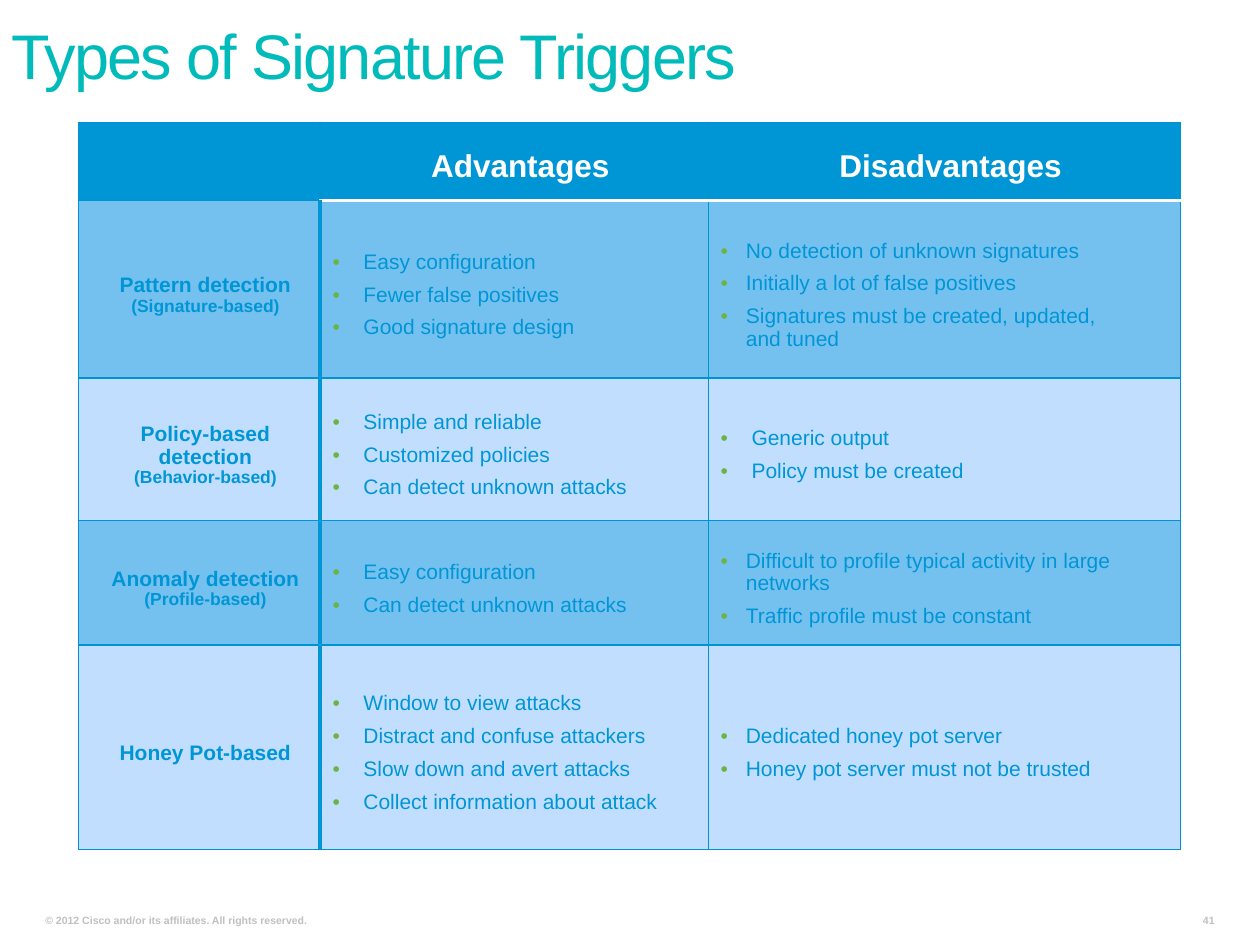
"""Build the slide that compares types of signature triggers."""
import dataclasses

import lxml.etree
import pptx
import pptx.dml.color
import pptx.enum.text
import pptx.oxml.ns
import pptx.util

ALIGN = pptx.enum.text.PP_ALIGN
ANCHOR = pptx.enum.text.MSO_ANCHOR


@dataclasses.dataclass(frozen=True)
class Theme:
    """Colours, type sizes and line widths of the slide."""
    font: str = "Arial"
    title: str = "01BBBB"
    accent: str = "0096D6"
    rule: str = "0093D1"
    bands: tuple = ("74C1EF", "C1DEFF")
    bullet: str = "6DB344"
    white: str = "FFFFFF"
    muted: str = "C0C0C0"
    title_size: float = 36
    header_size: float = 18
    body_size: float = 12
    note_size: float = 10
    footer_size: float = 6
    thin: float = 0.75
    thick: float = 2


class SlideBuilder:
    """Draws elements on one slide, measured on a grid of 100 by 75 squares."""

    def __init__(self, theme):
        """Open a presentation with one blank slide."""
        self.theme = theme
        self.deck = pptx.Presentation()
        self.deck.slide_width = pptx.util.Inches(10)
        self.deck.slide_height = pptx.util.Inches(7.5)
        self.slide = self.deck.slides.add_slide(self.deck.slide_layouts[6])

    def grid(self, *squares):
        """Turn grid squares into slide lengths."""
        return [round(count * self.deck.slide_width / 100) for count in squares]

    def element(self, parent, tag, **attributes):
        """Append a drawing element to a parent."""
        return lxml.etree.SubElement(parent, pptx.oxml.ns.qn(tag), attributes)

    def style(self, paragraph, size, color, bold=False):
        """Format every run of a paragraph."""
        for run in paragraph.runs:
            run.font.name = self.theme.font
            run.font.size = pptx.util.Pt(size)
            run.font.bold = bold
            run.font.color.rgb = pptx.dml.color.RGBColor.from_string(color)

    def label(self, text, place, size, color, bold=False, align=ALIGN.LEFT,
              wrap=True, inset=0.4, leading=1.0, tracking=0):
        """Add a line of text that stands on the bottom of its box."""
        frame = self.slide.shapes.add_textbox(*self.grid(*place)).text_frame
        frame.word_wrap = wrap
        frame.vertical_anchor = ANCHOR.BOTTOM
        frame.margin_left, frame.margin_right = self.grid(0.9, 0.9)
        frame.margin_top, frame.margin_bottom = self.grid(inset, inset)
        frame.text = text
        line = frame.paragraphs[0]
        line.alignment = align
        line.line_spacing = leading
        self.style(line, size, color, bold)
        if tracking:
            line.runs[0].font._element.set("spc", str(tracking * 100))

    def table(self, place, widths, heights):
        """Add a table with the given column widths and row heights."""
        table = self.slide.shapes.add_table(
            len(heights), len(widths), *self.grid(*place)).table
        for column, width in zip(table.columns, self.grid(*widths)):
            column.width = width
        for row, height in zip(table.rows, self.grid(*heights)):
            row.height = height
        return table

    def cell(self, cell, fill, lines, borders):
        """Fill a cell, set its lines of text and draw its four borders."""
        cell.fill.solid()
        cell.fill.fore_color.rgb = pptx.dml.color.RGBColor.from_string(fill)
        cell.vertical_anchor = ANCHOR.MIDDLE
        cell.margin_left, cell.margin_top = self.grid(1, 1)
        cell.margin_right = cell.margin_bottom = 0
        cell.text_frame.text = "\n".join(lines)
        for paragraph in cell.text_frame.paragraphs:
            paragraph.line_spacing = 0.95
        properties = cell._tc.get_or_add_tcPr()
        for index, side in enumerate("LRTB"):
            color, width = borders.get(side, (self.theme.rule, self.theme.thin))
            border = self.element(properties, f"a:ln{side}",
                                  w=str(pptx.util.Pt(width)))
            properties.insert(index, border)
            self.element(self.element(border, "a:solidFill"), "a:srgbClr", val=color)

    def heading(self, cell, text, borders):
        """Fill a cell of the header row."""
        self.cell(cell, self.theme.accent, [text], borders)
        paragraph = cell.text_frame.paragraphs[0]
        paragraph.alignment = ALIGN.CENTER
        self.style(paragraph, self.theme.header_size, self.theme.white, True)

    def method(self, cell, fill, lines, borders):
        """Fill a cell with a detection method and the note below it."""
        self.cell(cell, fill, lines, borders)
        sizes = (self.theme.body_size, self.theme.note_size)
        for paragraph, size in zip(cell.text_frame.paragraphs, sizes):
            paragraph.alignment = ALIGN.CENTER
            self.style(paragraph, size, self.theme.accent, True)

    def bullets(self, cell, fill, points, borders, indent):
        """Fill a cell with a bulleted list."""
        self.cell(cell, fill, points, borders)
        hang, = self.grid(indent)
        for index, paragraph in enumerate(cell.text_frame.paragraphs):
            properties = paragraph._p.get_or_add_pPr()
            properties.set("marL", str(hang))
            properties.set("indent", str(-hang))
            self.element(self.element(properties, "a:buClr"), "a:srgbClr",
                         val=self.theme.bullet)
            self.element(properties, "a:buFont", typeface=self.theme.font)
            self.element(properties, "a:buChar", char="•")
            if index:
                paragraph.space_before = pptx.util.Pt(self.theme.body_size / 2)
            self.style(paragraph, self.theme.body_size, self.theme.accent)


HEADINGS = ("", "Advantages", "Disadvantages")
NARROW, WIDE = 2, 2.45
TRIGGERS = [
    (["Pattern detection", "(Signature-based)"],
     ["Easy configuration", "Fewer false positives", "Good signature design"],
     ["No detection of unknown signatures", "Initially a lot of false positives",
      "Signatures must be created, updated,\vand tuned"], NARROW),
    (["Policy-based\vdetection", "(Behavior-based)"],
     ["Simple and reliable", "Customized policies", "Can detect unknown attacks"],
     ["Generic output", "Policy must be created"], WIDE),
    (["Anomaly detection", "(Profile-based)"],
     ["Easy configuration", "Can detect unknown attacks"],
     ["Difficult to profile typical activity in large networks",
      "Traffic profile must be constant"], NARROW),
    (["Honey Pot-based"],
     ["Window to view attacks", "Distract and confuse attackers",
      "Slow down and avert attacks", "Collect information about attack"],
     ["Dedicated honey pot server", "Honey pot server must not be trusted"], NARROW),
]


def main():
    """Lay out the title, the comparison table and the footer."""
    theme = Theme()
    builder = SlideBuilder(theme)
    footer = dict(size=theme.footer_size, color=theme.muted, bold=True)
    builder.label("© 2012 Cisco and/or its affiliates. All rights reserved.",
                  (2.7, 72, 37.4, 1.9), **footer)
    builder.label("41", (94.5, 72, 2.8, 1.9), align=ALIGN.RIGHT, wrap=False, **footer)
    builder.label("Types of Signature Triggers", (0, 2, 98.5, 5.8), theme.title_size,
                  theme.title, inset=0.5, leading=0.8, tracking=-1)

    comparison = builder.table((6.2, 9.7, 87.5, 57.7), (19.2, 30.8, 37.5),
                               (6.2, 14.1, 11.3, 9.9, 16.2))
    header_rule = (theme.white, theme.thick)
    method_rule = (theme.accent, theme.thick)
    for column, heading in enumerate(HEADINGS):
        builder.heading(comparison.cell(0, column), heading,
                        {"B": header_rule} if heading else {})
    for row, (method, advantages, disadvantages, indent) in enumerate(TRIGGERS, 1):
        fill = theme.bands[(row - 1) % 2]
        top = {"T": header_rule} if row == 1 else {}
        builder.method(comparison.cell(row, 0), fill, method, {"R": method_rule})
        builder.bullets(comparison.cell(row, 1), fill, advantages,
                        {"L": method_rule, **top}, WIDE)
        builder.bullets(comparison.cell(row, 2), fill, disadvantages, top, indent)
    builder.deck.save("out.pptx")


if __name__ == "__main__":
    main()
